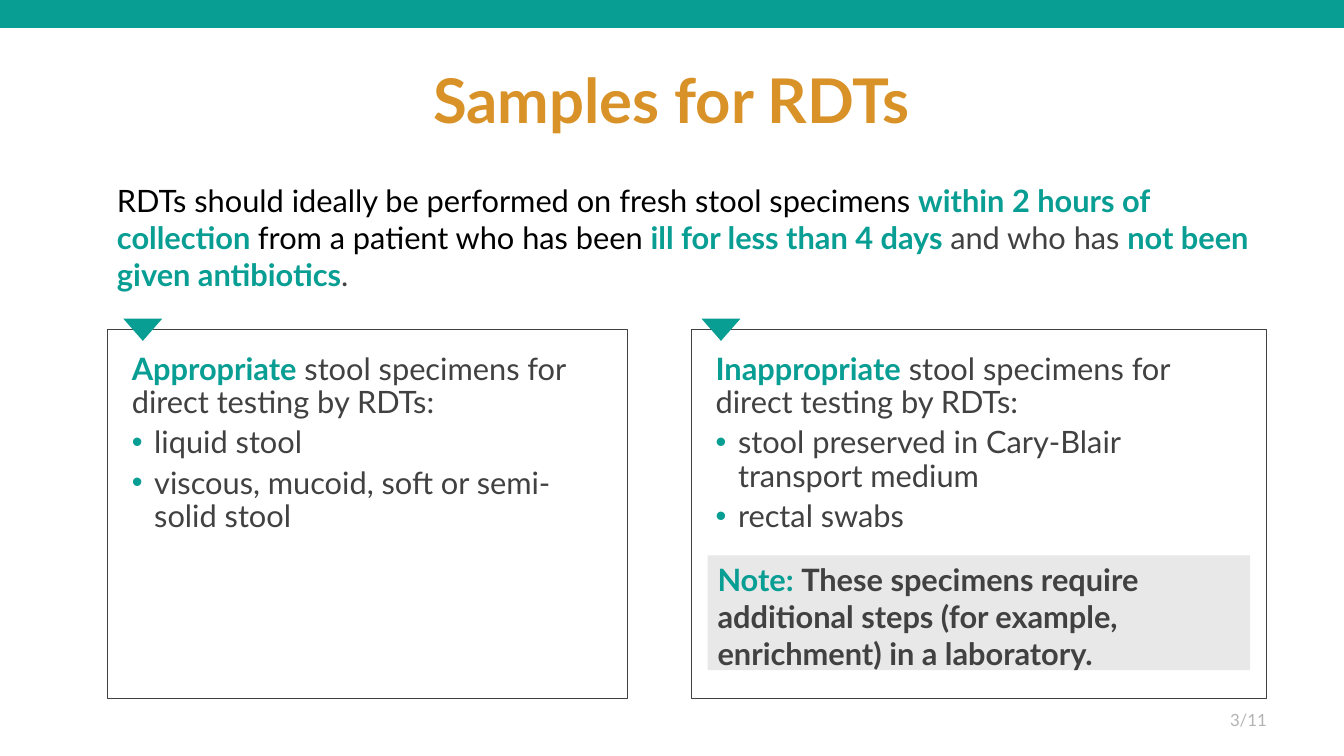
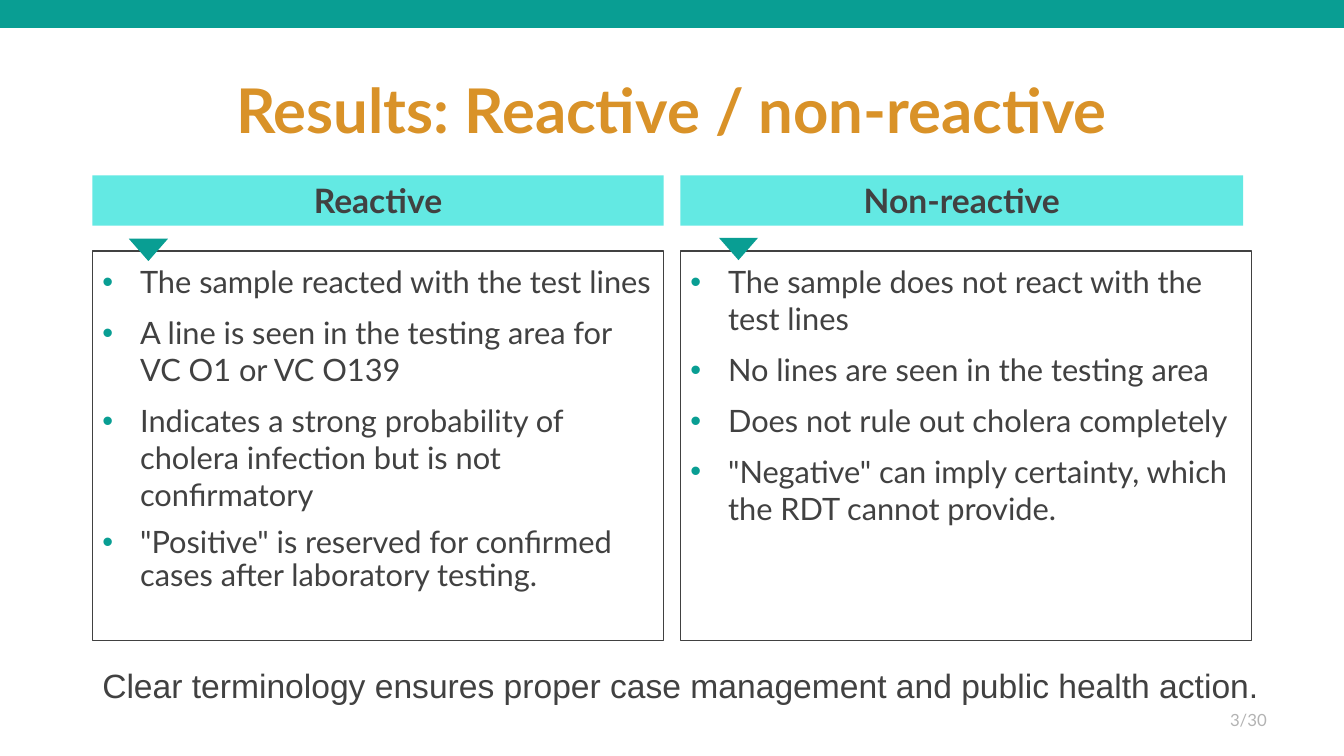
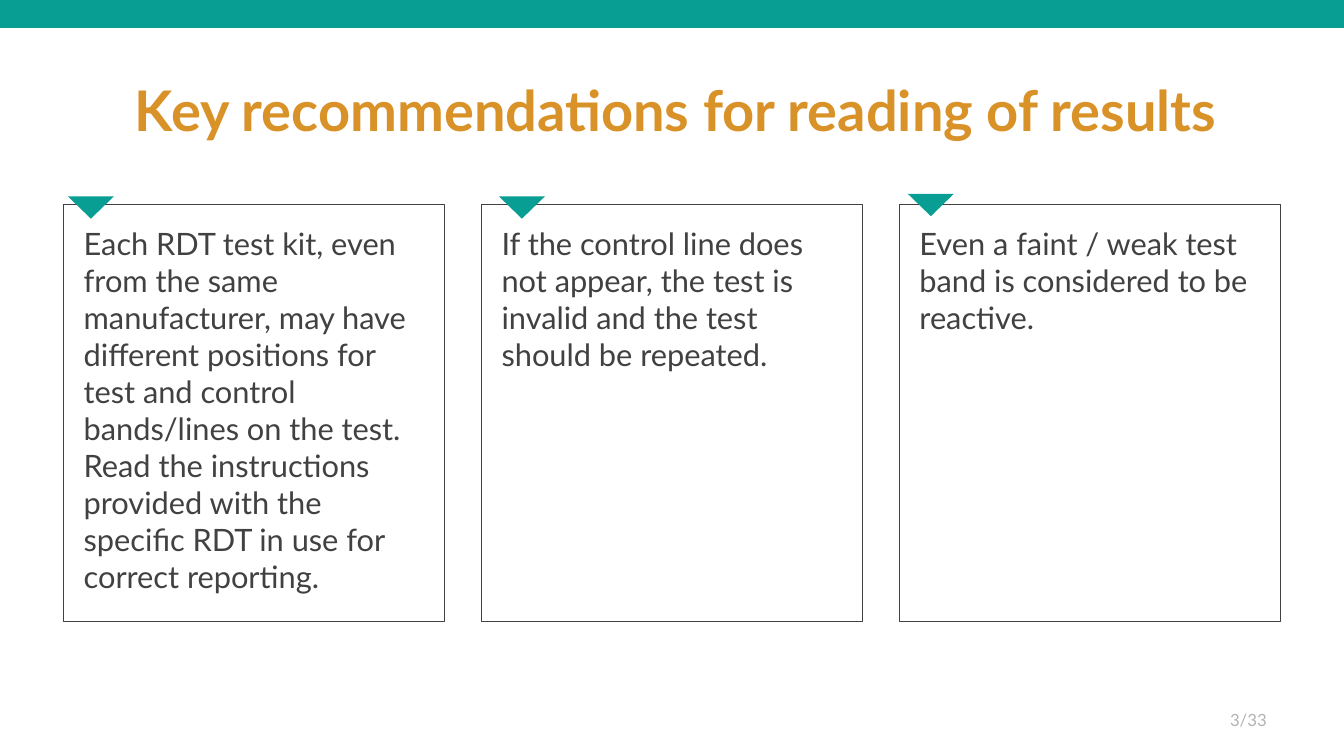
from dataclasses import dataclass

from lxml import etree
from pptx import Presentation
from pptx.dml.color import RGBColor
from pptx.enum.shapes import MSO_SHAPE
from pptx.enum.text import MSO_ANCHOR, PP_ALIGN
from pptx.oxml.ns import qn
from pptx.util import Pt

RECT, TRIANGLE = MSO_SHAPE.RECTANGLE, MSO_SHAPE.ISOSCELES_TRIANGLE
TOP, MIDDLE = MSO_ANCHOR.TOP, MSO_ANCHOR.MIDDLE
LEFT, CENTER, RIGHT = PP_ALIGN.LEFT, PP_ALIGN.CENTER, PP_ALIGN.RIGHT


@dataclass(frozen=True)
class Theme:
    teal: RGBColor = RGBColor(0x09, 0x9E, 0x93)
    aqua: RGBColor = RGBColor(0x63, 0xE9, 0xE3)
    orange: RGBColor = RGBColor(0xD9, 0x92, 0x28)
    ink: RGBColor = RGBColor(0x41, 0x41, 0x41)
    black: RGBColor = RGBColor(0, 0, 0)
    note: RGBColor = RGBColor(0xE8, 0xE8, 0xE8)
    muted: RGBColor = RGBColor(0xB3, 0xB3, 0xB3)
    font: str = "Lato"
    plain_font: str = "Arial"
    title: int = 44
    title_small: int = 40
    heading: int = 24
    body: int = 22
    footer: int = 12


T = Theme()
WIDTH, HEIGHT = 960, 540
INSETS = (7.2, 3.6, 7.2, 3.6)


@dataclass(frozen=True)
class Run:
    text: str
    color: RGBColor = T.ink
    bold: bool = False
    size: int = T.body
    font: str = T.font


@dataclass(frozen=True)
class Para:
    runs: tuple
    align: PP_ALIGN = LEFT
    spacing: float = 1.0
    before: float = 0
    after: float = 0
    hang: float = 0  # hanging indent; a bullet is set when above zero


def key(text):
    return Run(text, T.teal, True)


def add_bullet(p, hang):
    pPr = p._p.get_or_add_pPr()
    pPr.set("marL", str(Pt(hang)))
    pPr.set("indent", str(-Pt(hang)))
    clr = etree.SubElement(pPr, qn("a:buClr"))
    etree.SubElement(clr, qn("a:srgbClr"), val=str(T.teal))
    etree.SubElement(pPr, qn("a:buFont"), typeface="Arial")
    etree.SubElement(pPr, qn("a:buChar"), char="•")


def write(sp, paras, insets=INSETS, anchor=TOP):
    tf = sp.text_frame
    tf.word_wrap = True
    tf.vertical_anchor = anchor
    (tf.margin_left, tf.margin_top,
     tf.margin_right, tf.margin_bottom) = map(Pt, insets)
    for i, para in enumerate(paras):
        p = tf.add_paragraph() if i else tf.paragraphs[0]
        p.alignment = para.align
        p.line_spacing = para.spacing
        p.space_before, p.space_after = Pt(para.before), Pt(para.after)
        if para.hang:
            add_bullet(p, para.hang)
        for run in para.runs:
            r = p.add_run()
            r.text = run.text
            r.font.name, r.font.size = run.font, Pt(run.size)
            r.font.bold = run.bold
            r.font.color.rgb = run.color


def text_box(s, box, paras, anchor=TOP):
    write(s.shapes.add_textbox(*map(Pt, box)), paras, anchor=anchor)


def block(s, box, fill=None, line=None, kind=RECT):
    sp = s.shapes.add_shape(kind, *map(Pt, box))
    sp.shadow.inherit = False
    if fill is None:
        sp.fill.background()
    else:
        sp.fill.solid()
        sp.fill.fore_color.rgb = fill
    if line is None:
        sp.line.fill.background()
    else:
        sp.line.color.rgb = line
        sp.line.width = Pt(0.75)
    return sp


def card(s, box, paras, insets):
    write(block(s, box, line=T.ink), paras, insets)


def marker(s, box, dx, dy, width=28):
    """Downward triangle, offset from the top left corner of a card."""
    sp = block(s, (box[0] + dx, box[1] + dy, width, 16), T.teal, kind=TRIANGLE)
    sp.rotation = 180


def base_slide(prs, title, page, box, size=T.title):
    s = prs.slides.add_slide(prs.slide_layouts[6])
    block(s, (0, 0, WIDTH, 20), T.teal)
    heading = Run(title, T.orange, True, size)
    text_box(s, box, [Para((heading,), CENTER, 0.9)], MIDDLE)
    number = Run(page, T.muted, size=T.footer)
    text_box(s, (696, 500.5, 216, 29), [Para((number,), RIGHT, 0.9)], MIDDLE)
    return s


def specimen_card(s, box, lead, items, marker_dx):
    intro = Para((key(lead), Run(" stool specimens for direct testing by RDTs:")),
                 spacing=0.9, before=10)
    bullets = [Para((Run(t),), spacing=0.9, before=5, hang=16) for t in items]
    card(s, box, [intro, *bullets], (17.2,) * 4)
    marker(s, box, marker_dx, -8)


def samples_slide(prs):
    s = base_slide(prs, "Samples for RDTs", "3/11", (66, 21.5, 828, 104.5))
    text_box(s, (76.5, 126, 828, 87), [Para((
        Run("RDTs should ideally be performed on fresh stool specimens ", T.black),
        key("within 2 hours of collection "),
        Run("from a patient who has been ", T.black),
        key("ill for less than 4 days "),
        Run("and who has "),
        key("not been given antibiotics"),
        Run("."),
    ))])
    top, height = 235.5, 263.5
    specimen_card(s, (77, top, 371.5, height), "Appropriate",
                  ["liquid stool", "viscous, mucoid, soft or semi-solid stool"], 11)
    specimen_card(s, (494, top, 410.5, height), "Inappropriate",
                  ["stool preserved in Cary-Blair transport medium",
                   "rectal swabs"], 7)
    note = block(s, (505.5, 396.7, 387.5, 82), T.note)
    write(note, [Para((
        key("Note: "),
        Run("These specimens require additional steps (for example, enrichment) "
            "in a laboratory.", bold=True),
    ))])


def result_column(s, box, heading, header_width, items, marker_at, last_spacing=1.0):
    left, top, width, height = box
    header = block(s, (left, top, header_width, 36), T.aqua)
    write(header, [Para((Run(heading, bold=True, size=T.heading),), CENTER)])
    body = (left, top + 54, width, height - 54)
    spacings = [1.0] * (len(items) - 1) + [last_spacing]
    card(s, body, [Para((Run(t),), spacing=k, before=10, hang=27)
                   for t, k in zip(items, spacings)], (7.2, 8.6, 7.2, 3.6))
    marker(s, body, *marker_at)


def results_slide(prs):
    s = base_slide(prs, "Results: Reactive / non-reactive", "3/30",
                   (66, 28.8, 828, 104.5))
    top, width, height = 125.3, 408, 332
    result_column(s, (66, top, width, height), "Reactive", width, [
        "The sample reacted with the test lines",
        "A line is seen in the testing area for VC O1 or VC O139",
        "Indicates a strong probability of cholera infection but is not confirmatory",
        '"Positive" is reserved for confirmed cases after laboratory testing.',
    ], (26, -8.8), 0.9)
    result_column(s, (486, top, width, height), "Non-reactive", 402, [
        "The sample does not react with the test lines",
        "No lines are seen in the testing area",
        "Does not rule out cholera completely",
        '"Negative" can imply certainty, which the RDT cannot provide.',
    ], (27.5, -9.5))
    closing = Run("Clear terminology ensures proper case management and "
                  "public health action.", size=T.heading, font=T.plain_font)
    text_box(s, (66, 471.6, 847.5, 36), [Para((closing,))])


def recommendations_slide(prs):
    s = base_slide(prs, "Key recommendations for reading of results", "3/33",
                   (52.5, 28.8, 860, 103.7), T.title_small)
    left, pitch = 45.4, 298.5
    advice = [
        ("Each RDT test kit, even from the same manufacturer, may have different "
         "positions for test and control bands/lines on the test. Read the "
         "instructions provided with the specific RDT in use for correct "
         "reporting.", 3, -6),
        ("If the control line does not appear, the test is invalid and the test "
         "should be repeated.", 12.4, -6),
        ("Even a faint / weak test band is considered to be reactive.", 6, -7.8),
    ]
    for i, (text, dx, dy) in enumerate(advice):
        box = (left + i * pitch, 146.2, 272, 297.5)
        card(s, box, [Para((Run(text),), before=10)], (14.4,) * 4)
        marker(s, box, dx, dy, 33)


def main():
    prs = Presentation()
    prs.slide_width, prs.slide_height = Pt(WIDTH), Pt(HEIGHT)
    samples_slide(prs)
    results_slide(prs)
    recommendations_slide(prs)
    prs.save("out.pptx")


if __name__ == "__main__":
    main()
